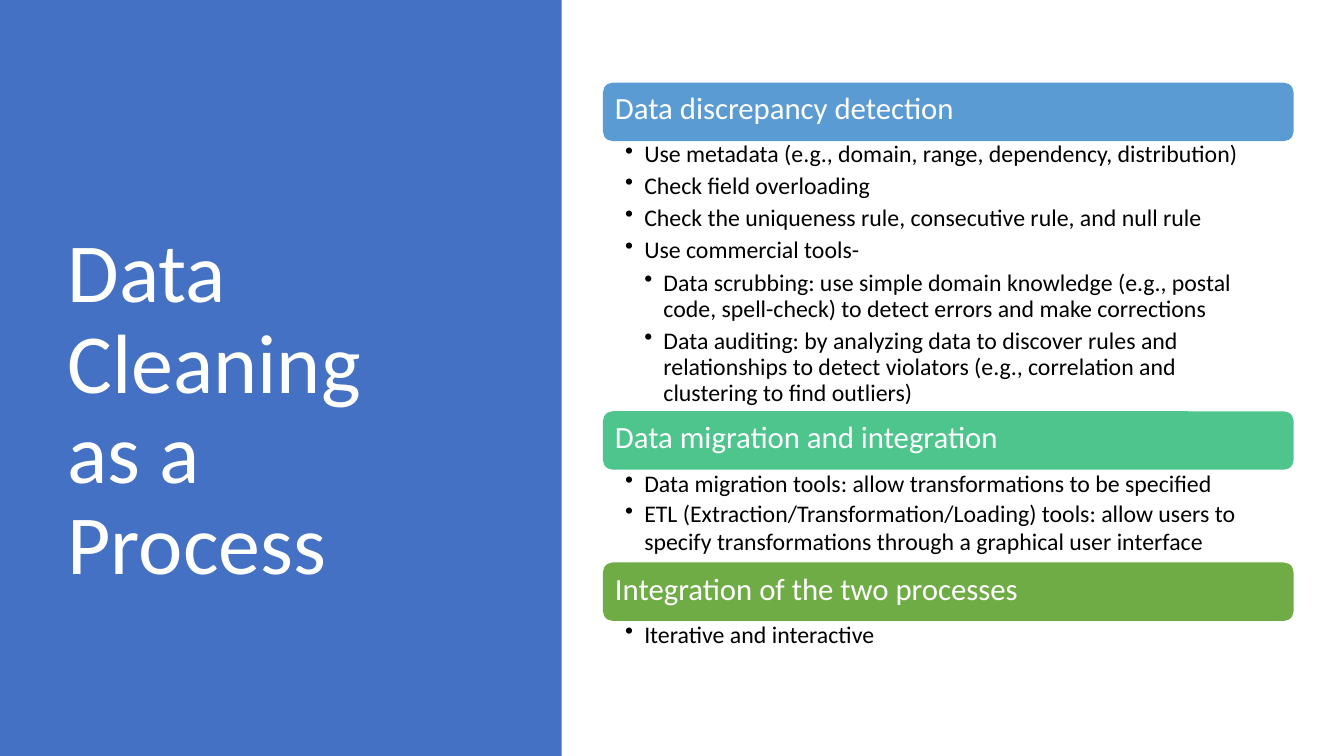
"""Build the slide "Data Cleaning as a Process"."""
from lxml.etree import SubElement
from pptx import Presentation
from pptx.dml.color import RGBColor
from pptx.enum.shapes import MSO_SHAPE as SHAPE
from pptx.enum.text import MSO_ANCHOR as ANCHOR, MSO_AUTO_SIZE as AUTO, PP_ALIGN as ALIGN
from pptx.oxml.ns import qn
from pptx.util import Inches, Pt


def add_text(tf, text, size=17, color="000000", before=2.4, spacing=1.0, indent=0.01, bullet=False):
    p = tf.paragraphs[-1]
    if p.runs:
        p = tf.add_paragraph()
    p.alignment = ALIGN.LEFT
    p.space_before = Pt(before)
    p.line_spacing = spacing
    r = p.add_run()
    r.text = text
    r.font.name = "Calibri"
    r.font.size = Pt(size)
    r.font.color.rgb = RGBColor.from_string(color)
    pPr = p._p.get_or_add_pPr()
    pPr.set("marL", str(Inches(indent)))
    pPr.set("indent", str(Inches(-0.19 if bullet else 0)))
    if bullet:
        SubElement(pPr, qn("a:buChar")).set("char", "•")


def add_block(kind, left, top, width, height, color):
    sp = s.shapes.add_shape(kind, Inches(left), Inches(top), Inches(width), Inches(height))
    sp.shadow.inherit = False
    sp.fill.solid()
    sp.fill.fore_color.rgb = RGBColor.from_string(color)
    sp.line.fill.background()
    return sp


prs = Presentation()
prs.slide_width, prs.slide_height = Inches(13.33), Inches(7.5)
s = prs.slides.add_slide(prs.slide_layouts[5])

panel = add_block(SHAPE.RECTANGLE, 0, 0, 5.57, 7.5, "4471C4")
s.shapes._spTree.insert(2, panel._element)

for top, color in [(0.82, "5B9BD4"), (4.08, "4DC58D"), (5.58, "6FAC46")]:
    add_block(SHAPE.ROUNDED_RECTANGLE, 5.98, top, 6.85, 0.58, color)

title = s.shapes.title
process = s.shapes.add_textbox(Inches(6.09), Inches(0.7), Inches(6.47), Inches(4.87))
integration = s.shapes.add_textbox(Inches(6.09), Inches(5.47), Inches(4.03), Inches(0.98))
title.left, title.top = Inches(0.66), Inches(2.17)
title.width, title.height = Inches(3.75), Inches(2.83)
for sp, inset in [(title, 0.11), (process, 0.18), (integration, 0.18)]:
    tf = sp.text_frame
    tf.word_wrap = True
    tf.auto_size = AUTO.NONE
    tf.vertical_anchor = ANCHOR.TOP
    tf.margin_left = tf.margin_right = tf.margin_bottom = 0
    tf.margin_top = Inches(inset)

add_text(title.text_frame, "Data Cleaning as a Process", size=60, color="FFFFFF", before=8.2, spacing=0.9)

head = dict(size=22, color="FFFFFF", before=13.2)
item = dict(indent=0.3, bullet=True)
first = dict(item, before=9.6)
sub = dict(indent=0.49, bullet=True, before=4.5, spacing=Pt(18.7))

for text, style in [
    ("Data discrepancy detection", head),
    ("Use metadata (e.g., domain, range, dependency, distribution)", first),
    ("Check field overloading", item),
    ("Check the uniqueness rule, consecutive rule, and null rule", item),
    ("Use commercial tools-", item),
    ("Data scrubbing: use simple domain knowledge (e.g., postal code, spell-check) "
     "to detect errors and make corrections", sub),
    ("Data auditing: by analyzing data to discover rules and relationships to detect violators "
     "(e.g., correlation and clustering to find outliers)", dict(sub, before=4.1)),
    ("Data migration and integration", dict(head, before=8.3)),
    ("Data migration tools: allow transformations to be specified", first),
    ("ETL (Extraction/Transformation/Loading) tools: allow users to specify transformations "
     "through a graphical user interface", dict(item, spacing=Pt(19.5))),
]:
    add_text(process.text_frame, text, **style)

add_text(integration.text_frame, "Integration of the two processes", **head)
add_text(integration.text_frame, "Iterative and interactive", **first)

prs.save("out.pptx")
